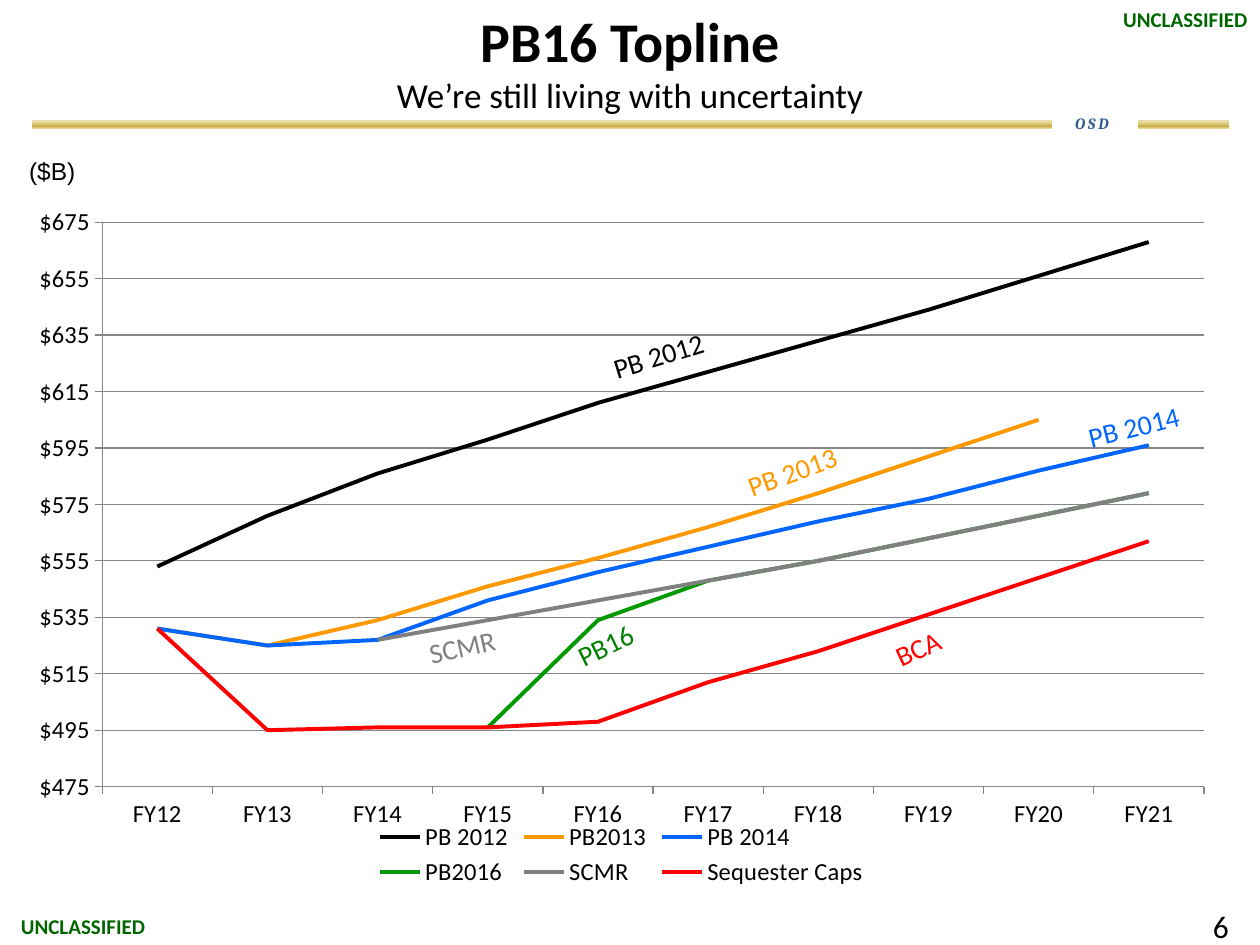
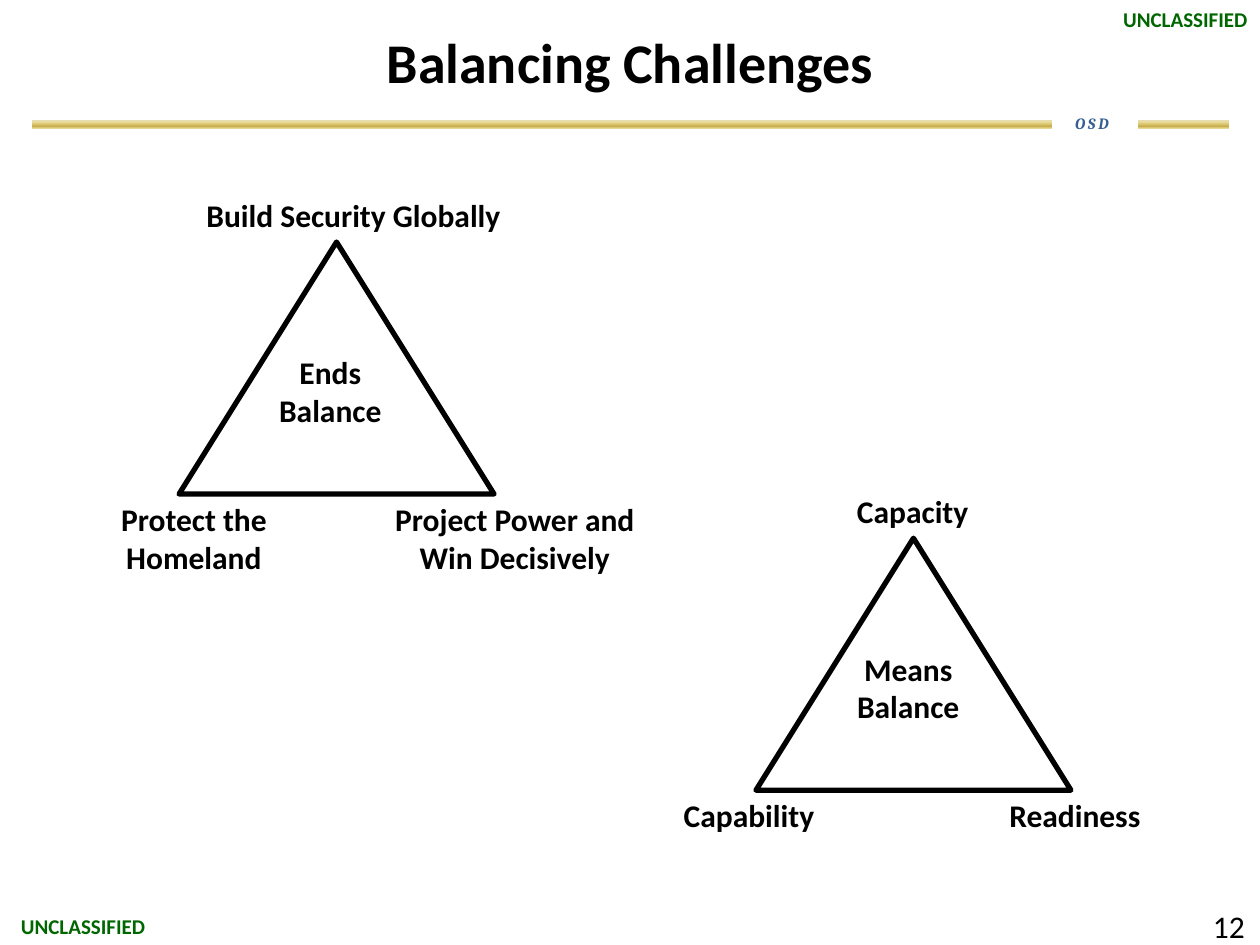
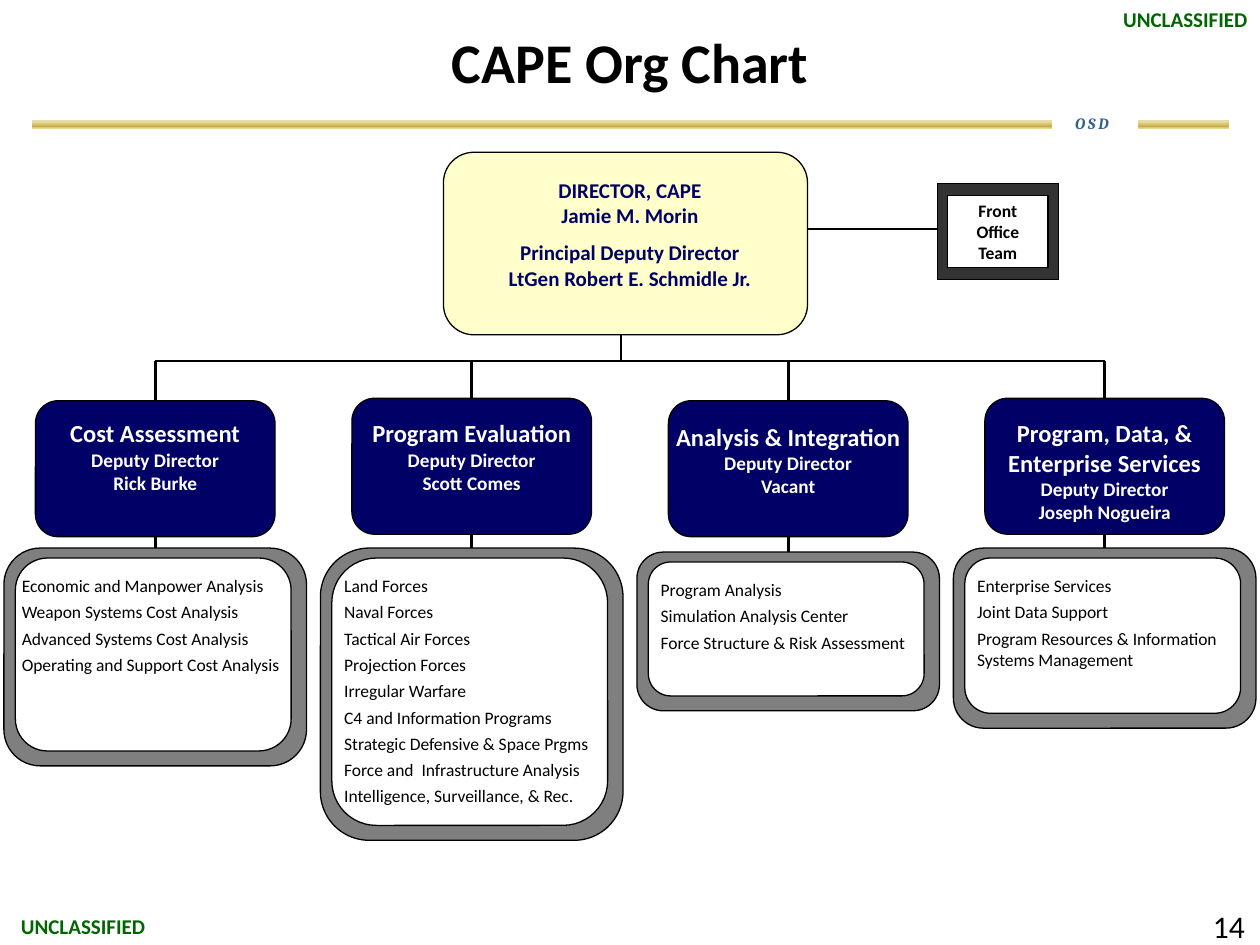
import pptx
import pptx.chart.data
import pptx.dml.color
import pptx.enum.chart
import pptx.enum.shapes
import pptx.enum.text
import pptx.oxml
import pptx.oxml.ns
import pptx.util
from lxml import etree

Cm = pptx.util.Cm
Pt = pptx.util.Pt
qn = pptx.oxml.ns.qn
SHAPE = pptx.enum.shapes.MSO_SHAPE
ANCHOR = pptx.enum.text.MSO_ANCHOR
ALIGN = pptx.enum.text.PP_ALIGN

BLACK, WHITE, NAVY, CREAM = "000000", "FFFFFF", "000066", "FFFFCC"
GRAY, CHARCOAL, GREEN, STEEL = "7F7F7F", "333333", "006600", "376092"
GOLD_STOPS = [(0, "E6DCAC"), (12, "E6D78A"), (30, "C7AC4C"), (69, "E6D78A"), (78, "E6DCAC")]

MARKING = "UNCLASSIFIED"
MARKING_PLACES = [(22.02, 0), (-0.2, 18.29)]

TOPLINE_TITLE = ["PB16 Topline", ("We’re still living with uncertainty", {"size": 20, "bold": False})]
YEARS = [f"FY{year}" for year in range(12, 22)]
BUDGETS = [
    ("PB 2012", BLACK, [553, 571, 586, 598, 611, 622, 633, 644, 656, 668]),
    ("PB2013", "FF9900", [531, 525, 534, 546, 556, 567, 579, 592, 605, None]),
    ("PB 2014", "0066FF", [531, 525, 527, 541, 551, 560, 569, 577, 587, 596]),
    ("PB2016", "009900", [None, None, None, 496, 534, 548, 555, 563, 571, 579]),
    ("SCMR", "808080", [None, None, 527, 534, 541, 548, 555, 563, 571, 579]),
    ("Sequester Caps", "FF0000", [531, 495, 496, 496, 498, 512, 523, 536, 549, 562]),
]
PLOT_AREA = {"x": 0.072, "y": 0.042, "w": 0.908, "h": 0.807}
CURVE_LABELS = [
    ("PB 2012", BLACK, 11.73, 6.83, 342.9),
    ("PB 2013", "FF9900", 14.43, 9.17, 340),
    ("PB 2014", "0066FF", 21.31, 8.26, 345.8),
    ("BCA", "FF0000", 16.97, 12.73, 335.1),
    ("PB16", "008000", 10.67, 12.67, 334),
    ("SCMR", "808080", 7.77, 12.7, 347.3),
]

LABEL_ROWS = {"top": -1.06, "inside": 2.12, "base": 5.08}
TRIANGLES = [
    (3.61, 4.88, [
        ("Build Security Globally", "top", 3.52, 7),
        ("Protect the Homeland", "base", 0.3, 4),
        ("Project Power and Win Decisively", "base", 6.77, 5.5),
        (["Ends", "Balance"], "inside", 3.05, 4),
    ]),
    (15.24, 10.85, [
        ("Capacity", "top", 3.16, 4),
        ("Capability", "base", -0.14, 4),
        ("Readiness", "base", 6.43, 4),
        (["Means", "Balance"], "inside", 3.07, 4),
    ]),
]

DIRECTORS = [
    "DIRECTOR, CAPE",
    "Jamie M. Morin",
    ("Principal Deputy Director", {"before": 7}),
    "LtGen Robert E. Schmidle Jr.",
]
FRONT_OFFICE = ["Front", "Office", "Team"]
DIVISIONS = [
    {"name": "Cost Assessment", "deputy": "Rick Burke", "head_top": 8.08, "name_top": 8.31,
     "panel_top": 11.05, "panel_height": 4.39, "inset": 0.13,
     "offices": ["Economic and Manpower Analysis", "Weapon Systems Cost Analysis",
                 "Advanced Systems Cost Analysis", "Operating and Support Cost Analysis"]},
    {"name": "Program Evaluation", "deputy": "Scott Comes", "head_top": 8.03, "name_top": 8.31,
     "panel_top": 11.05, "panel_height": 5.89, "inset": 0.25,
     "offices": ["Land Forces", "Naval Forces", "Tactical Air Forces", "Projection Forces",
                 "Irregular Warfare", "C4 and Information Programs",
                 "Strategic Defensive & Space Prgms", "Force and  Infrastructure Analysis",
                 "Intelligence, Surveillance, & Rec."]},
    {"name": "Analysis & Integration", "deputy": "Vacant", "head_top": 8.08, "name_top": 8.38,
     "panel_top": 11.13, "panel_height": 3.2, "inset": 0.25,
     "offices": ["Program Analysis", "Simulation Analysis Center",
                 "Force Structure & Risk Assessment"]},
    {"name": "Program, Data, & Enterprise Services", "deputy": "Joseph Nogueira",
     "head_top": 8.03, "name_top": 8.31,
     "panel_top": 11.05, "panel_height": 3.63, "inset": 0.25,
     "offices": ["Enterprise Services", "Joint Data Support",
                 "Program Resources & Information Systems Management"]},
]
FIRST_PANEL_LEFT, PANEL_PITCH, PANEL_WIDTH = 0.08, 6.38, 6.1
HEAD_WIDTH, HEAD_HEIGHT = 4.83, 2.74
BUS_TOP, STEM_LEFT = 7.28, 12.52


def color(value):
    return pptx.dml.color.RGBColor.from_string(value)


def box(left, top, width, height):
    return Cm(left), Cm(top), Cm(width), Cm(height)


def write(frame, text, *, size=18, ink=BLACK, bold=False, italic=False, font="Calibri",
          align=ALIGN.LEFT, anchor=ANCHOR.TOP, wrap=True, before=0, after=0,
          spacing=None, inset=0.25):
    frame.auto_size = pptx.enum.text.MSO_AUTO_SIZE.NONE
    frame.word_wrap = wrap
    frame.vertical_anchor = anchor
    frame.margin_left = frame.margin_right = Cm(inset)
    for index, item in enumerate([text] if isinstance(text, str) else text):
        words, changes = (item, {}) if isinstance(item, str) else item
        paragraph = frame.paragraphs[0] if index == 0 else frame.add_paragraph()
        paragraph.alignment = align
        paragraph.space_before = Pt(changes.get("before", before))
        paragraph.space_after = Pt(after)
        run = paragraph.add_run()
        run.text = words
        run.font.name = font
        run.font.size = Pt(changes.get("size", size))
        run.font.bold = changes.get("bold", bold)
        run.font.italic = italic
        run.font.color.rgb = color(ink)
        if spacing:
            run._r.get_or_add_rPr().set("spc", str(spacing))


def add_text(slide, place, text, **style):
    shape = slide.shapes.add_textbox(*box(*place))
    write(shape.text_frame, text, **style)
    return shape


def add_block(slide, kind, place, fill=None, line=None, width=0.75):
    shape = slide.shapes.add_shape(kind, *box(*place))
    shape.shadow.inherit = False
    if fill:
        shape.fill.solid()
        shape.fill.fore_color.rgb = color(fill)
    else:
        shape.fill.background()
    if line:
        shape.line.color.rgb = color(line)
        shape.line.width = Pt(width)
    else:
        shape.line.fill.background()
    return shape


def add_line(slide, start, end):
    connector = slide.shapes.add_connector(
        pptx.enum.shapes.MSO_CONNECTOR.STRAIGHT, *box(*start, *end))
    connector.line.color.rgb = color(BLACK)
    connector.line.width = Pt(1.5)
    etree.SubElement(connector.element.spPr, qn("a:effectLst"))


def fill_gold(shape):
    shape.fill.gradient()
    shape.fill.gradient_angle = 90
    stops = shape.element.spPr.find(".//" + qn("a:gsLst"))
    for stop in list(stops):
        stops.remove(stop)
    for position, value in GOLD_STOPS:
        stop = etree.SubElement(stops, qn("a:gs"), pos=str(position * 1000))
        etree.SubElement(stop, qn("a:srgbClr"), val=value)


def furnish_layout(layout, slide):
    title, *footers = layout.placeholders
    for placeholder in footers:
        placeholder.element.getparent().remove(placeholder.element)
    title.left, title.top, title.width, title.height = box(0.64, 0.28, 24.13, 1.9)

    shared = [add_text(slide, (left, top, 3.38, 0.76), MARKING, size=12, ink=GREEN,
                       bold=True, align=ALIGN.RIGHT) for left, top in MARKING_PLACES]
    band = add_block(slide, SHAPE.RECTANGLE, (0.64, 2.41, 24.13, 0.2))
    fill_gold(band)
    badge = add_block(slide, SHAPE.RECTANGLE, (21.21, 2.16, 1.73, 0.64), WHITE)
    write(badge.text_frame, "OSD ", size=9, ink=STEEL, bold=True, italic=True,
          font="Cambria", align=ALIGN.CENTER, spacing=150)
    for shape in shared + [band, badge]:
        layout.shapes.element.append(shape.element)


def start_slide(slide, title, number):
    write(slide.shapes.title.text_frame, title, size=32, bold=True,
          align=ALIGN.CENTER, anchor=ANCHOR.MIDDLE)
    add_text(slide, (24.2, 18.16, 1.6, 0.81), number, wrap=False)


def place_plot(chart):
    plot_area = chart.element.find(".//" + qn("c:plotArea"))
    for old in plot_area.findall(qn("c:layout")):
        plot_area.remove(old)
    layout = etree.Element(qn("c:layout"))
    manual = etree.SubElement(layout, qn("c:manualLayout"))
    settings = {"layoutTarget": "inner", "xMode": "edge", "yMode": "edge", **PLOT_AREA}
    for name, value in settings.items():
        etree.SubElement(manual, qn("c:" + name), val=str(value))
    plot_area.insert(0, layout)


def add_budget_chart(slide):
    data = pptx.chart.data.CategoryChartData()
    data.categories = YEARS
    for name, _, values in BUDGETS:
        data.add_series(name, values)
    chart = slide.shapes.add_chart(
        pptx.enum.chart.XL_CHART_TYPE.LINE, *box(0.3, 3.89, 24.46, 14.1), data).chart
    chart.has_title = False
    chart.font.name = "Calibri"
    chart.font.size = Pt(14)
    chart.font.color.rgb = color(BLACK)
    chart.has_legend = True
    chart.legend.position = pptx.enum.chart.XL_LEGEND_POSITION.BOTTOM
    chart.legend.include_in_layout = False
    chart.legend.font.size = Pt(14)
    chart.plots[0].vary_by_categories = False
    for series, (_, ink, _) in zip(chart.plots[0].series, BUDGETS):
        series.smooth = False
        series.format.line.color.rgb = color(ink)
        series.format.line.width = Pt(2.25)

    dollars = chart.value_axis
    dollars.minimum_scale, dollars.maximum_scale, dollars.major_unit = 475, 675, 20
    dollars.tick_labels.number_format = '"$"#,##0'
    dollars.tick_labels.number_format_is_linked = False
    dollars.has_major_gridlines = True
    for axis in (dollars, chart.category_axis):
        axis.major_tick_mark = pptx.enum.chart.XL_TICK_MARK.OUTSIDE
        axis.tick_labels.font.size = Pt(14)
    for rule in (dollars, chart.category_axis, dollars.major_gridlines):
        rule.format.line.color.rgb = color("868686")
        rule.format.line.width = Pt(0.75)
    place_plot(chart)


def build_topline(slide):
    start_slide(slide, TOPLINE_TITLE, "6")
    add_text(slide, (0.33, 3.02, 1.45, 0.86), "($B)", size=14, font="Arial",
             align=ALIGN.CENTER, wrap=False)
    add_budget_chart(slide)
    for text, ink, left, top, angle in CURVE_LABELS:
        label = add_text(slide, (left, top, 3.12, 0.79), text, size=16, ink=ink,
                         align=ALIGN.CENTER, anchor=ANCHOR.BOTTOM, wrap=False)
        label.rotation = angle


def build_balance(slide):
    start_slide(slide, "Balancing Challenges", "12")
    for left, top, labels in TRIANGLES:
        add_block(slide, SHAPE.ISOSCELES_TRIANGLE, (left, top, 6.35, 5.08),
                  line=BLACK, width=3)
        for text, row, center, width in labels:
            add_text(slide, (left + center - width / 2, top + LABEL_ROWS[row], width, 1.27),
                     text, bold=True, align=ALIGN.CENTER)


def add_division(slide, division, left):
    center = left + PANEL_WIDTH / 2
    top, height = division["panel_top"], division["panel_height"]
    add_line(slide, (center, BUS_TOP), (center, top))
    add_block(slide, SHAPE.ROUNDED_RECTANGLE, (left, top, PANEL_WIDTH, height), GRAY, BLACK)
    add_block(slide, SHAPE.ROUNDED_RECTANGLE,
              (left + 0.23, top + 0.2, 5.56, height - 0.5), WHITE, BLACK)
    add_text(slide, (left + 0.23, top + 0.42, 5.6, height - 0.6), division["offices"],
             size=10, after=3, inset=division["inset"])
    add_block(slide, SHAPE.ROUNDED_RECTANGLE,
              (center - HEAD_WIDTH / 2, division["head_top"], HEAD_WIDTH, HEAD_HEIGHT),
              NAVY, BLACK)
    add_text(slide, (center - 2.78, division["name_top"], 5.56, 2.3),
             [(division["name"], {"size": 14}), "Deputy Director", division["deputy"]],
             size=11, ink=WHITE, bold=True, align=ALIGN.CENTER)


def build_organization(slide):
    start_slide(slide, "CAPE Org Chart", "14")
    lefts = [FIRST_PANEL_LEFT + PANEL_PITCH * index for index in range(len(DIVISIONS))]
    add_line(slide, (16.28, 4.62), (18.9, 4.62))
    add_line(slide, (STEM_LEFT, 6.73), (STEM_LEFT, BUS_TOP))
    add_line(slide, (lefts[0] + PANEL_WIDTH / 2, BUS_TOP),
             (lefts[-1] + PANEL_WIDTH / 2, BUS_TOP))
    add_block(slide, SHAPE.ROUNDED_RECTANGLE, (8.94, 3.07, 7.34, 3.68), CREAM, BLACK)
    add_text(slide, (8.94, 3.45, 7.52, 3.2), DIRECTORS, size=12, ink=NAVY,
             bold=True, align=ALIGN.CENTER)
    add_block(slide, SHAPE.RECTANGLE, (18.9, 3.7, 2.44, 1.94), CHARCOAL, BLACK)
    office = add_block(slide, SHAPE.RECTANGLE, (19.1, 3.94, 2.03, 1.45), WHITE, BLACK)
    write(office.text_frame, FRONT_OFFICE, size=10, bold=True,
          align=ALIGN.CENTER, anchor=ANCHOR.MIDDLE)
    for division, left in zip(DIVISIONS, lefts):
        add_division(slide, division, left)


def main():
    presentation = pptx.Presentation()
    presentation.slide_width, presentation.slide_height = Cm(25.4), Cm(19.05)
    layout = presentation.slide_layouts.get_by_name("Title Only")
    builders = [build_topline, build_balance, build_organization]
    slides = [presentation.slides.add_slide(layout) for _ in builders]
    furnish_layout(layout, slides[0])
    for build, slide in zip(builders, slides):
        build(slide)
    presentation.save("out.pptx")


if __name__ == "__main__":
    main()
